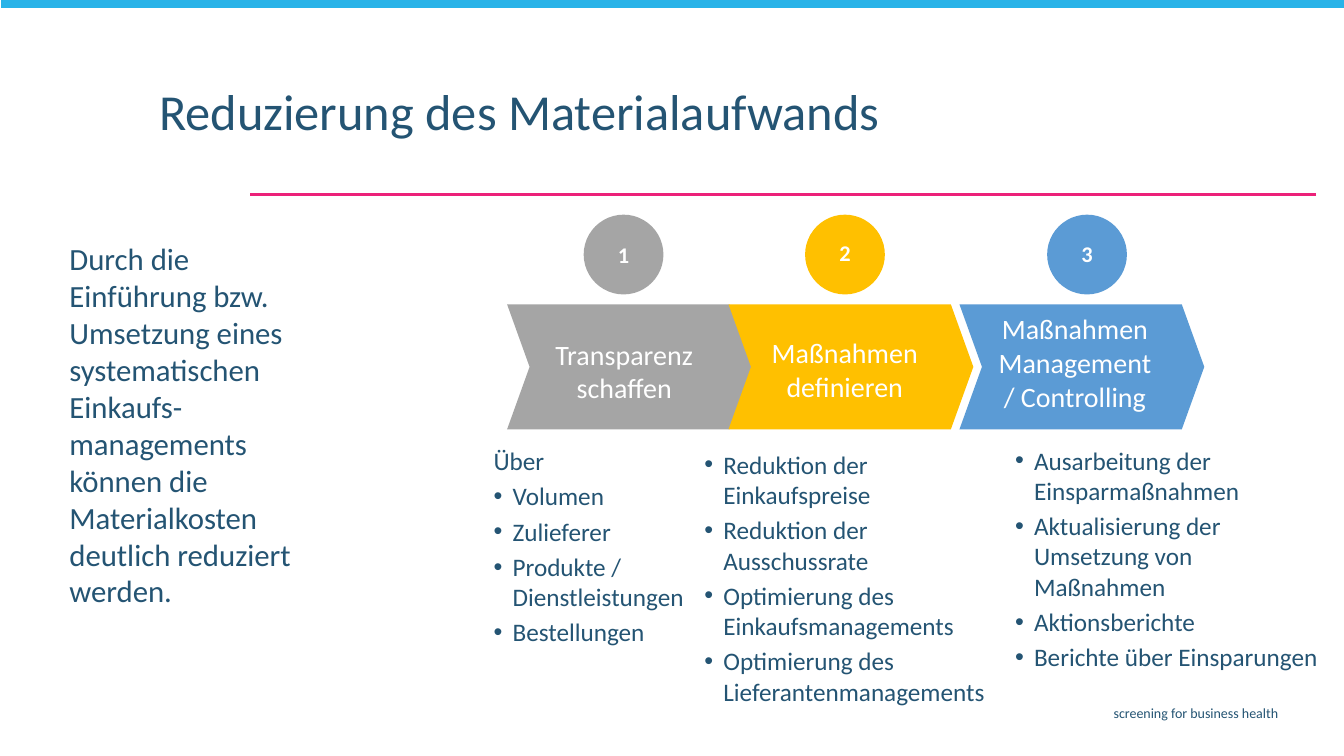
"""Builds the slide on reducing material costs in three steps."""
from lxml import etree
from pptx import Presentation
from pptx.dml.color import RGBColor
from pptx.enum.shapes import MSO_CONNECTOR, MSO_SHAPE
from pptx.enum.text import MSO_ANCHOR, PP_ALIGN
from pptx.oxml.ns import qn
from pptx.util import Cm, Pt

NAVY = RGBColor(0x24, 0x54, 0x73)
PINK = RGBColor(0xEC, 0x21, 0x79)
CYAN = RGBColor(0x29, 0xB3, 0xE8)
GRAY = RGBColor(0xA5, 0xA5, 0xA5)
GOLD = RGBColor(0xFF, 0xC0, 0x00)
BLUE = RGBColor(0x5B, 0x9B, 0xD5)
WHITE = RGBColor(0xFF, 0xFF, 0xFF)
STRAIGHT = MSO_CONNECTOR.STRAIGHT
RECTANGLE, CHEVRON, OVAL = MSO_SHAPE.RECTANGLE, MSO_SHAPE.CHEVRON, MSO_SHAPE.OVAL
TOP, MIDDLE = MSO_ANCHOR.TOP, MSO_ANCHOR.MIDDLE
LEFT, CENTER, RIGHT = PP_ALIGN.LEFT, PP_ALIGN.CENTER, PP_ALIGN.RIGHT

prs = Presentation()
prs.slide_width, prs.slide_height = Cm(33.87), Cm(19.05)
slide = prs.slides.add_slide(prs.slide_layouts[6])


def add_filled(preset, box, color):
    shape = slide.shapes.add_shape(preset, *map(Cm, box))
    shape.shadow.inherit = False
    shape.fill.solid()
    shape.fill.fore_color.rgb = color
    shape.line.fill.background()
    return shape


def add_text(box, lines, size, color=NAVY, align=LEFT, anchor=TOP, bold=False,
             margins=(0.25, 0.13)):
    frame = slide.shapes.add_textbox(*map(Cm, box)).text_frame
    frame.word_wrap = True
    frame.vertical_anchor = anchor
    frame.margin_left = frame.margin_right = Cm(margins[0])
    frame.margin_top = frame.margin_bottom = Cm(margins[1])
    frame.text = "\n".join(lines)
    for paragraph in frame.paragraphs:
        paragraph.alignment = align
        for run in paragraph.runs:
            run.font.name = "Calibri"
            run.font.size = Pt(size)
            run.font.bold = bold
            run.font.color.rgb = color
    return frame


divider = slide.shapes.add_connector(STRAIGHT, Cm(33.17), Cm(4.9), Cm(6.3), Cm(4.9))
divider.line.color.rgb = PINK
divider.line.width = Pt(1.5)
etree.SubElement(divider.element.spPr, qn("a:effectLst"))
add_filled(RECTANGLE, (0.03, -0.05, 33.87, 0.25), CYAN)
add_text((9.27, 17.63, 23.19, 0.74), ["screening for business health"], 10, align=RIGHT)

title = add_text((3.76, 2.06, 24.59, 1.93), ["Reduzierung des Materialaufwands"], 36)
title.paragraphs[0].line_spacing = 0.9
add_text((1.52, 5.94, 6.3, 9.63),
         ["Durch die Einführung bzw. Umsetzung eines systematischen "
          "Einkaufs-managements können die Materialkosten deutlich reduziert werden."],
         22, margins=(0.23, 0.1))

steps = [
    (GRAY, 12.78, 14.71, 5.94, "Transparenz schaffen", (13.34, 8.36, 4.78, 1.96)),
    (GOLD, 18.36, 20.29, 5.89, "Maßnahmen definieren", (19.13, 8.33, 4.32, 1.96)),
    (BLUE, 24.18, 26.39, 5.92, "Maßnahmen Management / Controlling",
     (24.79, 7.72, 4.6, 2.82)),
]
for number, (color, arrow_left, circle_left, number_top, label, label_box) in enumerate(steps, 1):
    arrow = add_filled(CHEVRON, (arrow_left, 7.67, 6.17, 3.15), color)
    arrow.adjustments[0] = 0.18
    add_text(label_box, [label], 20, WHITE, CENTER, MIDDLE)
    add_filled(OVAL, (circle_left, 5.41, 2.01, 2.01), color)
    add_text((circle_left - 0.75, number_top, 3.51, 0.94), [str(number)], 16,
             WHITE, CENTER, MIDDLE, bold=True)

details = [
    ((12.34, 11.1, 5.38, 5.33),
     ["Über", "Volumen", "Zulieferer", "Produkte / Dienstleistungen", "Bestellungen"]),
    ((17.65, 11.2, 7.59, 6.71),
     ["Reduktion der Einkaufspreise", "Reduktion der Ausschussrate",
      "Optimierung des Einkaufsmanagements", "Optimierung des Lieferantenmanagements"]),
    ((25.48, 11.48, 8.08, 5.18),
     ["Ausarbeitung der Einsparmaßnahmen", "Aktualisierung der Umsetzung von Maßnahmen",
      "Aktionsberichte", "Berichte über Einsparungen"]),
]
for box, lines in details:
    frame = add_text(box, lines, 18, anchor=MIDDLE, margins=(0.1, 0.05))
    for index, paragraph in enumerate(frame.paragraphs):
        if index:
            paragraph.space_before = Pt(3.6)
        if paragraph.text != "Über":
            properties = paragraph._p.get_or_add_pPr()
            properties.set("marL", str(Cm(0.48)))
            properties.set("indent", str(-Cm(0.48)))
            etree.SubElement(properties, qn("a:buFont"), typeface="Arial")
            etree.SubElement(properties, qn("a:buChar"), char="•")

prs.save("out.pptx")
